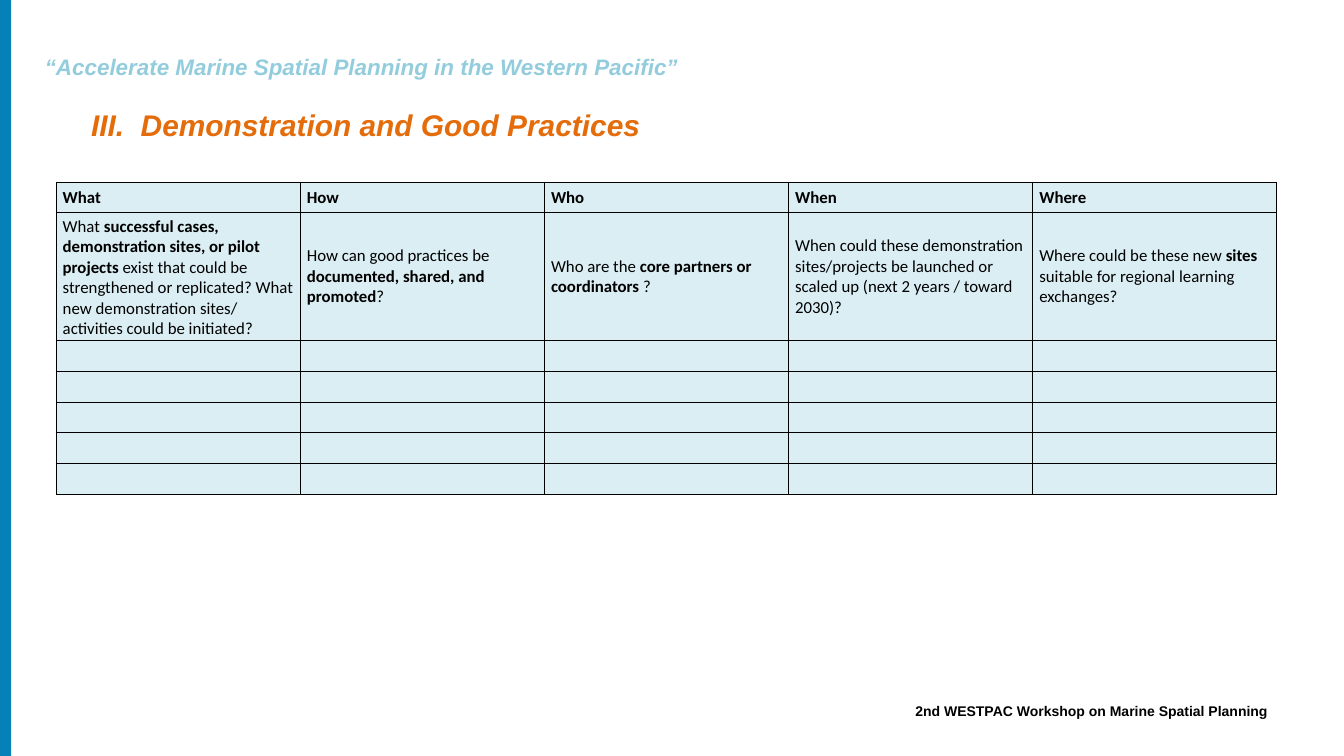
from typing import NamedTuple

from lxml.etree import SubElement
from pptx import Presentation
from pptx.dml.color import RGBColor as Rgb
from pptx.enum.shapes import MSO_SHAPE as Shape
from pptx.enum.text import MSO_ANCHOR as Anchor, PP_ALIGN as Align
from pptx.oxml.ns import qn
from pptx.util import Pt

HUES = {
    "bar": "0581B8",
    "theme": "93CDDD",
    "title": "E46C0A",
    "cell": "DBEEF4",
    "ink": "000000",
}


class Run(NamedTuple):
    text: str
    bold: bool = False


class Label(NamedTuple):
    text: str
    left: float
    top: float
    width: float
    height: float
    size: float
    hue: str
    italic: bool = True
    align: Align = Align.LEFT
    anchor: Anchor = Anchor.TOP
    inset: tuple[float, float] = (0, 0)


class Topic(NamedTuple):
    head: str
    runs: list[Run]


LABELS = [
    Label("2nd WESTPAC Workshop on Marine Spatial Planning", 733.5, 753, 625, 18,
          15, "ink", italic=False, align=Align.RIGHT, anchor=Anchor.MIDDLE),
    Label("“Accelerate Marine Spatial Planning in the Western Pacific”",
          48, 57, 966, 29, 24, "theme"),
    Label("III.  Demonstration and Good Practices", 90.5, 111, 881, 46,
          32, "title", inset=(7.2, 3.6)),
]

TOPICS = [
    Topic("What", [
        Run("What "),
        Run("successful cases, demonstration sites, or pilot projects", True),
        Run(" exist that could be strengthened or replicated? "
            "What new demonstration sites/ activities could be initiated?"),
    ]),
    Topic("How", [
        Run("How can good practices be "),
        Run("documented, shared, and promoted", True),
        Run("?"),
    ]),
    Topic("Who", [
        Run("Who are the "),
        Run("core partners or coordinators", True),
        Run(" ?"),
    ]),
    Topic("When", [
        Run("When could these demonstration sites/projects be launched "
            "or scaled up (next 2 years / toward 2030)?"),
    ]),
    Topic("Where", [
        Run("Where could be these new "),
        Run("sites ", True),
        Run("suitable for regional learning exchanges?"),
    ]),
]

EMPTY = 5
COL, ROW, TALL = 261.6, 33, 132


def color(name: str) -> Rgb:
    return Rgb.from_string(HUES[name])


def add_run(para, run: Run, font: str, size: float, hue: str, italic=False) -> None:
    part = para.add_run()
    part.text = run.text
    part.font.name = font
    part.font.size = Pt(size)
    part.font.bold = run.bold
    part.font.italic = italic
    part.font.color.rgb = color(hue)


def add_bar(slide, height: int) -> None:
    bar = slide.shapes.add_shape(Shape.RECTANGLE, 0, 0, Pt(12), height)
    bar.shadow.inherit = False
    bar.fill.solid()
    bar.fill.fore_color.rgb = color("bar")
    bar.line.fill.background()


def add_label(slide, label: Label) -> None:
    box = slide.shapes.add_textbox(Pt(label.left), Pt(label.top),
                                   Pt(label.width), Pt(label.height))
    frame = box.text_frame
    frame.word_wrap = True
    frame.vertical_anchor = label.anchor
    frame.margin_left = frame.margin_right = Pt(label.inset[0])
    frame.margin_top = frame.margin_bottom = Pt(label.inset[1])
    para = frame.paragraphs[0]
    para.alignment = label.align
    add_run(para, Run(label.text, True), "Arial", label.size, label.hue, label.italic)


def style_cell(cell) -> None:
    """Give a cell its four borders, then its fill, in schema order."""
    props = cell._tc.get_or_add_tcPr()
    for side in ("lnL", "lnR", "lnT", "lnB"):
        line = SubElement(props, qn(f"a:{side}"), w=str(Pt(1)))
        fill = SubElement(line, qn("a:solidFill"))
        SubElement(fill, qn("a:srgbClr"), val=HUES["ink"])
    cell.fill.solid()
    cell.fill.fore_color.rgb = color("cell")
    cell.vertical_anchor = Anchor.MIDDLE


def add_grid(slide, topics: list[Topic]) -> None:
    rows = [ROW, TALL] + [ROW] * EMPTY
    frame = slide.shapes.add_table(len(rows), len(topics), Pt(60), Pt(195),
                                   Pt(COL * len(topics)), Pt(sum(rows)))
    table = frame.table
    table.first_row = table.horz_banding = False
    for row, height in zip(table.rows, rows):
        row.height = Pt(height)
    for cell in table.iter_cells():
        style_cell(cell)
    for col, topic in enumerate(topics):
        table.columns[col].width = Pt(COL)
        for row, runs in enumerate(([Run(topic.head, True)], topic.runs)):
            para = table.cell(row, col).text_frame.paragraphs[0]
            for run in runs:
                add_run(para, run, "Calibri", 18, "ink")


def main() -> None:
    deck = Presentation()
    deck.slide_width, deck.slide_height = Pt(1440), Pt(810)
    slide = deck.slides.add_slide(deck.slide_layouts[6])
    add_bar(slide, deck.slide_height)
    for label in LABELS:
        add_label(slide, label)
    add_grid(slide, TOPICS)
    deck.save("out.pptx")


if __name__ == "__main__":
    main()
